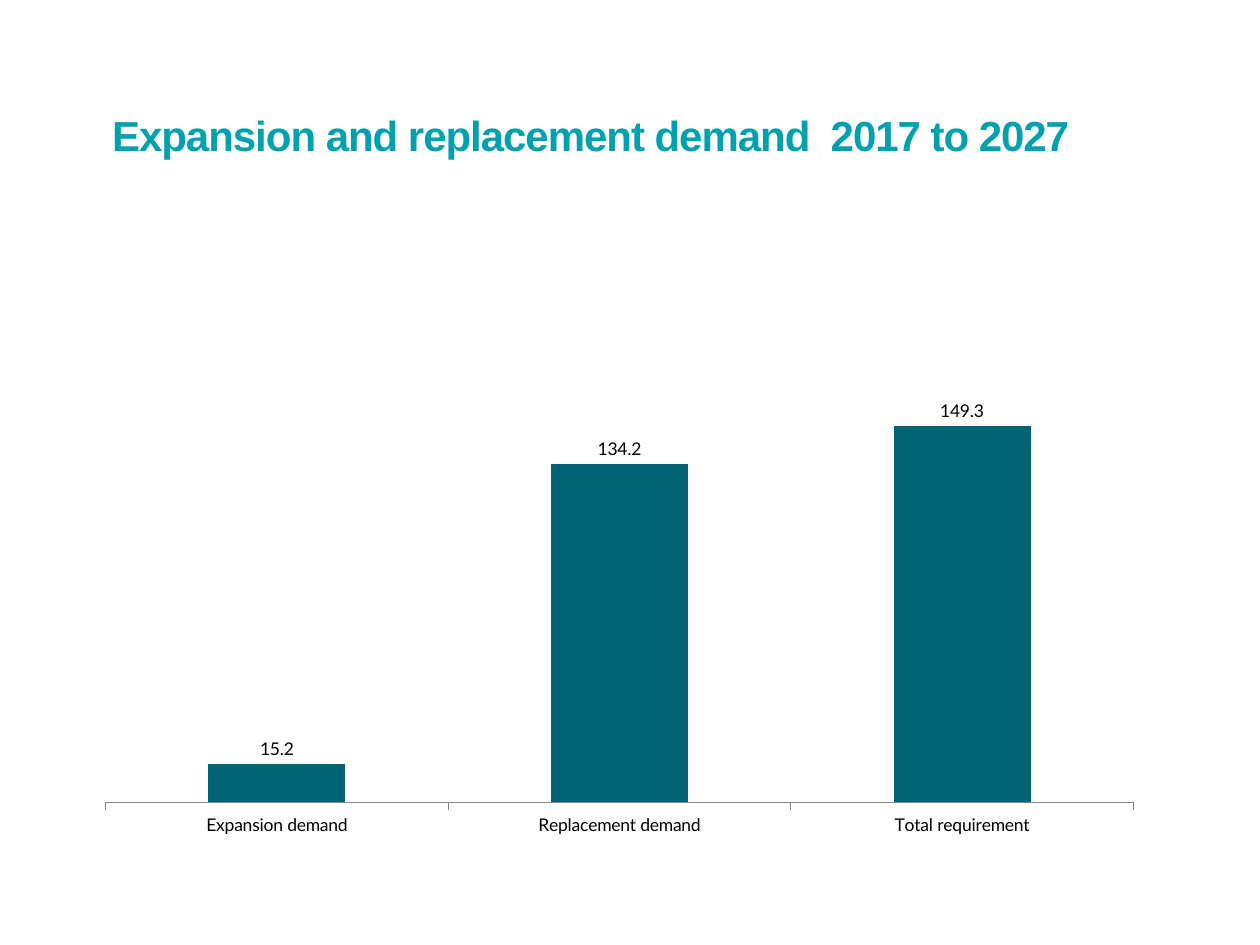
from lxml import etree
from pptx import Presentation
from pptx.chart.data import CategoryChartData
from pptx.dml.color import RGBColor
from pptx.enum.chart import XL_CHART_TYPE, XL_LABEL_POSITION, XL_TICK_MARK
from pptx.enum.text import MSO_ANCHOR
from pptx.oxml import parse_xml
from pptx.oxml.ns import nsdecls
from pptx.util import Pt

TURQUOISE = RGBColor(0x00, 0xA1, 0xAF)
TEAL = RGBColor(0x00, 0x63, 0x73)
BLACK = RGBColor(0x00, 0x00, 0x00)
GREY = RGBColor(0x86, 0x86, 0x86)

deck = Presentation()
deck.slide_width, deck.slide_height = Pt(720), Pt(540)
page = deck.slides.add_slide(deck.slide_layouts[6])

# Title
box = page.shapes.add_textbox(Pt(64.1), Pt(-15.1), Pt(571.7), Pt(106.6))
frame = box.text_frame
frame.word_wrap = True
frame.vertical_anchor = MSO_ANCHOR.BOTTOM
frame.margin_left = frame.margin_top = frame.margin_right = frame.margin_bottom = 0
para = frame.paragraphs[0]
para.line_spacing = Pt(68)
span = para.add_run()
span.text = "Expansion and replacement demand  2017 to 2027"
span.font.name = "Arial"
span.font.size = Pt(24)
span.font.bold = True
span.font.color.rgb = TURQUOISE
span.font._element.set("spc", "-60")

# Demand chart
data = CategoryChartData(number_format="0.0")
data.categories = ["Expansion demand", "Replacement demand", "Total requirement"]
data.add_series("Series 1", [15.2, 134.2, 149.3])
chart = page.shapes.add_chart(
    XL_CHART_TYPE.COLUMN_CLUSTERED, Pt(52.6), Pt(228.2), Pt(595.4), Pt(254.2), data
).chart
chart.has_legend = False
chart.has_title = False
chart.font.name = "Lato"
chart.font.size = Pt(10)
chart.font.color.rgb = BLACK

# Columns and value labels
plot = chart.plots[0]
plot.gap_width = 150
plot.vary_by_categories = False
fill = plot.series[0].format.fill
fill.solid()
fill.fore_color.rgb = TEAL
plot.has_data_labels = True
labels = plot.data_labels
labels.show_value = True
labels.number_format = "0.0"
labels.number_format_is_linked = False
labels.position = XL_LABEL_POSITION.OUTSIDE_END

# Axes
category_axis = chart.category_axis
category_axis.major_tick_mark = XL_TICK_MARK.OUTSIDE
category_axis.format.line.color.rgb = GREY
category_axis.format.line.width = Pt(0.75)
value_axis = chart.value_axis
value_axis.minimum_scale = 0
value_axis.maximum_scale = 160
value_axis.has_major_gridlines = False
value_axis.visible = False

# Inner plot area, as fractions of the chart
layout = parse_xml(f"<c:layout {nsdecls('c')}><c:manualLayout/></c:layout>")
settings = {
    "layoutTarget": "inner", "xMode": "edge", "yMode": "edge",
    "x": "0.013", "y": "0", "w": "0.987", "h": "0.906",
}
for name, value in settings.items():
    etree.SubElement(layout[0], f"{{{layout.nsmap['c']}}}{name}").set("val", value)
plot_area = chart._chartSpace.chart.plotArea
for automatic in plot_area.xpath("c:layout"):
    plot_area.remove(automatic)
plot_area.insert(0, layout)

deck.save("out.pptx")
